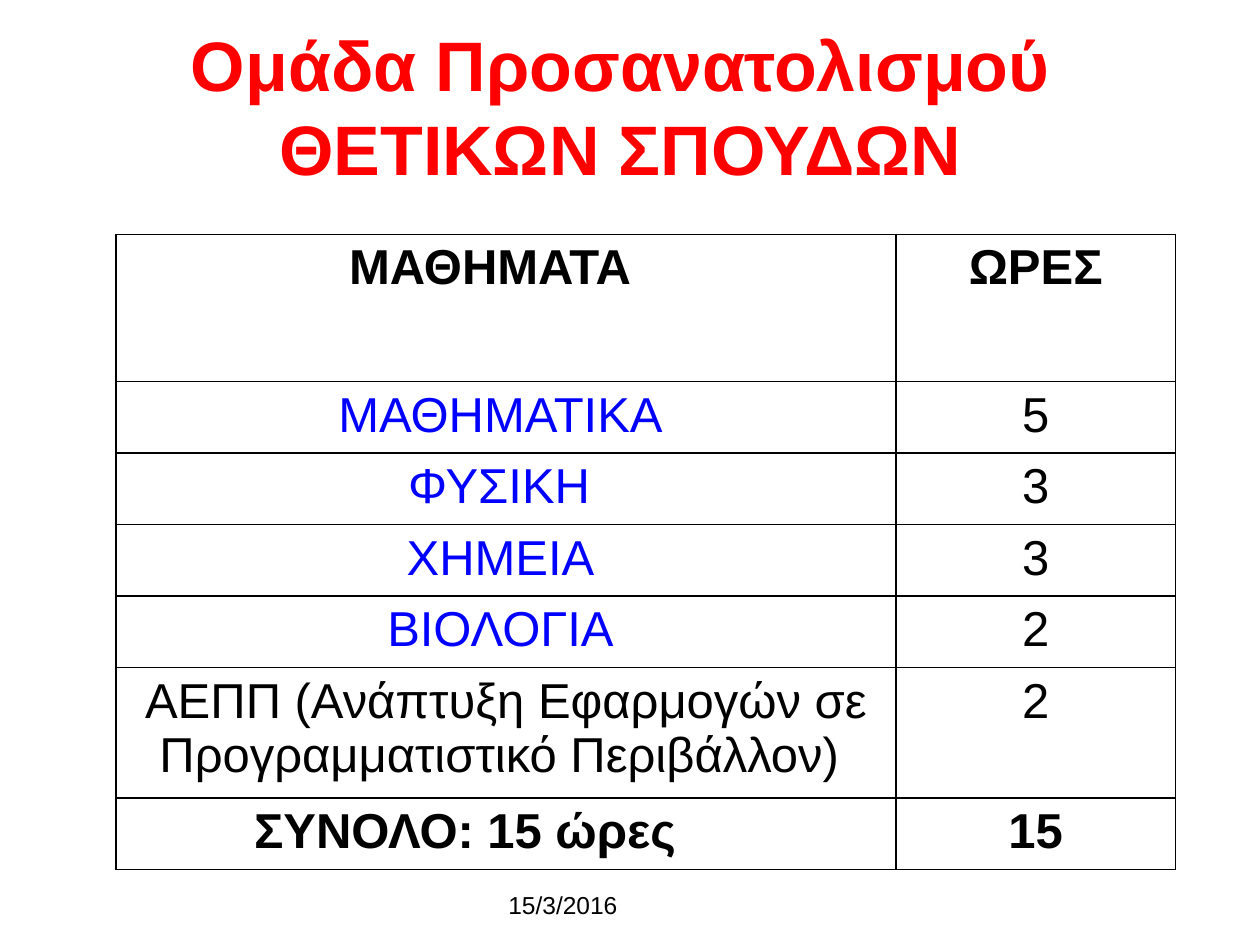
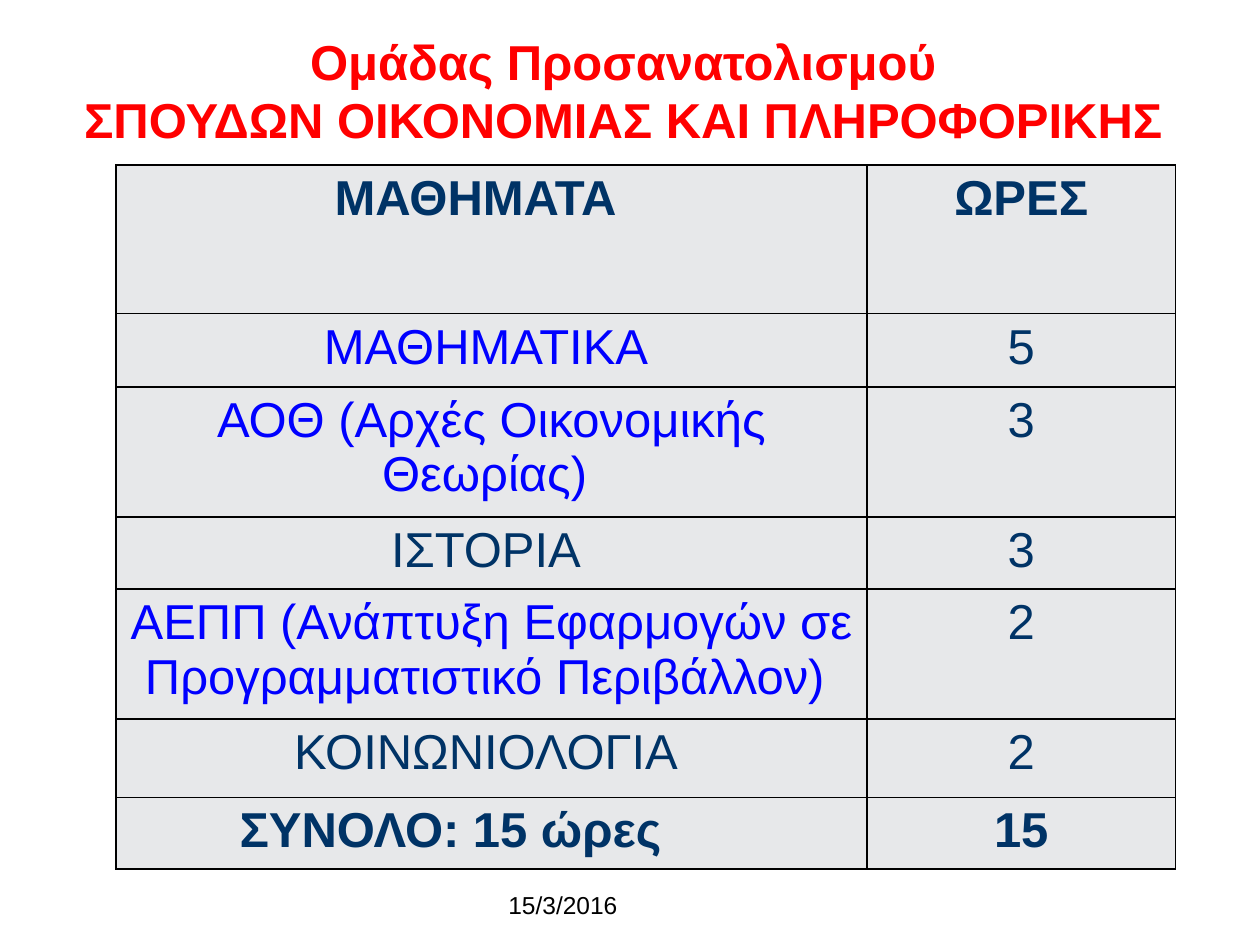
import pptx
import pptx.dml.color
import pptx.enum.text
import pptx.oxml
import pptx.oxml.ns
import pptx.util
from pptx.util import Inches

# Shared look
FONT = "Arial"
RED, BLUE, BLACK, NAVY, GREY = "FF0000", "0000FF", "000000", "003366", "E7E8EA"
DATE = "15/3/2016"
ALIGN = pptx.enum.text.PP_ALIGN
ANCHOR = pptx.enum.text.MSO_ANCHOR
TABLE_LEFT = 0.92
CELL_MARGIN = 0.1
HEADER_INDENT, TOTAL_INDENT = 0.25, 0.65
HEADER = ("ΜΑΘΗΜΑΤΑ", "ΩΡΕΣ")
TOTAL = ("ΣΥΝΟΛΟ: 15 ώρες", "15")
AEPP = "ΑΕΠΠ (Ανάπτυξη Εφαρμογών σε Προγραμματιστικό Περιβάλλον) "


def color(hex_text):
    return pptx.dml.color.RGBColor.from_string(hex_text)


def write(tf, text, size=28, fill=BLACK, bold=False, align=ALIGN.CENTER):
    """Write one formatted paragraph; each line of text ends in a line break."""
    tf.word_wrap = True
    p = tf.paragraphs[0]
    p.alignment = align
    for i, line in enumerate(text.split("\n")):
        if i:
            p.add_line_break()
        r = p.add_run()
        r.text = line
        r.font.name = FONT
        r.font.size = pptx.util.Pt(size)
        r.font.bold = bold
        r.font.color.rgb = color(fill)


def add_text(s, box, text, **style):
    sp = s.shapes.add_textbox(*(Inches(v) for v in box))
    sp.text_frame.vertical_anchor = ANCHOR.BOTTOM
    write(sp.text_frame, text, **style)


def add_borders(cell):
    tc_pr = cell._tc.get_or_add_tcPr()
    for side in ("lnL", "lnR", "lnT", "lnB"):
        tc_pr.append(pptx.oxml.parse_xml(
            f'<a:{side} {pptx.oxml.ns.nsdecls("a")} w="12700"><a:solidFill>'
            f'<a:srgbClr val="{BLACK}"/></a:solidFill></a:{side}>'))


def add_hours_table(s, top, widths, heights, courses, ink, fill=None):
    """Courses are (name, hours, name colour), set between header and total."""
    rows = [(*HEADER, ink), *courses, (*TOTAL, ink)]
    last = len(rows) - 1
    indents = {0: HEADER_INDENT, last: TOTAL_INDENT}
    table = s.shapes.add_table(len(rows), 2, Inches(TABLE_LEFT), Inches(top),
                               Inches(sum(widths)), Inches(sum(heights))).table
    table.first_row = table.horz_banding = False
    for column, width in zip(table.columns, widths):
        column.width = Inches(width)
    for i, (name, hours, name_color) in enumerate(rows):
        table.rows[i].height = Inches(heights[i])
        for j, (text, text_color) in enumerate([(name, name_color), (hours, ink)]):
            cell = table.cell(i, j)
            add_borders(cell)
            if fill:
                cell.fill.solid()
                cell.fill.fore_color.rgb = color(fill)
            else:
                cell.fill.background()
            write(cell.text_frame, text, fill=text_color, bold=i in indents)
        # Header and total names sit left of centre
        table.cell(i, 0).margin_right = Inches(CELL_MARGIN + indents.get(i, 0))


def add_course_slide(prs, title, title_size, title_height, **table):
    s = prs.slides.add_slide(prs.slide_layouts[6])
    add_text(s, (2.67, 6.83, 2.33, 0.52), DATE, size=14, align=ALIGN.RIGHT)
    add_text(s, (0.5, 0.3, 9, title_height), title,
             size=title_size, fill=RED, bold=True)
    add_hours_table(s, **table)


def main():
    prs = pptx.Presentation()
    prs.slide_width, prs.slide_height = Inches(10), Inches(7.5)

    # Science studies
    add_course_slide(
        prs, "Ομάδα Προσανατολισμού \nΘΕΤΙΚΩΝ ΣΠΟΥΔΩΝ ", 40, 1.25,
        top=1.86, widths=(6.19, 2.22), ink=BLACK,
        heights=(1.17, *[0.54] * 4, 0.9, 0.54),
        courses=[("ΜΑΘΗΜΑΤΙΚΑ ", "5", BLUE),
                 ("ΦΥΣΙΚΗ ", "3", BLUE),
                 ("ΧΗΜΕΙΑ ", "3", BLUE),
                 ("ΒΙΟΛΟΓΙΑ ", "2", BLUE),
                 (AEPP, "2", BLACK)])

    # Economics and computing studies
    add_course_slide(
        prs, "Ομάδας Προσανατολισμού \nΣΠΟΥΔΩΝ ΟΙΚΟΝΟΜΙΑΣ ΚΑΙ ΠΛΗΡΟΦΟΡΙΚΗΣ ", 28, 0.93,
        top=1.31, widths=(5.96, 2.45), ink=NAVY, fill=GREY,
        heights=(1.18, 0.58, 0.62, 0.57, 0.99, 0.62, 0.57),
        courses=[("ΜΑΘΗΜΑΤΙΚΑ ", "5", BLUE),
                 ("ΑΟΘ (Αρχές Οικονομικής Θεωρίας) ", "3", BLUE),
                 ("ΙΣΤΟΡΙΑ ", "3", NAVY),
                 (AEPP, "2", BLUE),
                 ("ΚΟΙΝΩΝΙΟΛΟΓΙΑ ", "2", NAVY)])

    prs.save("out.pptx")


if __name__ == "__main__":
    main()
